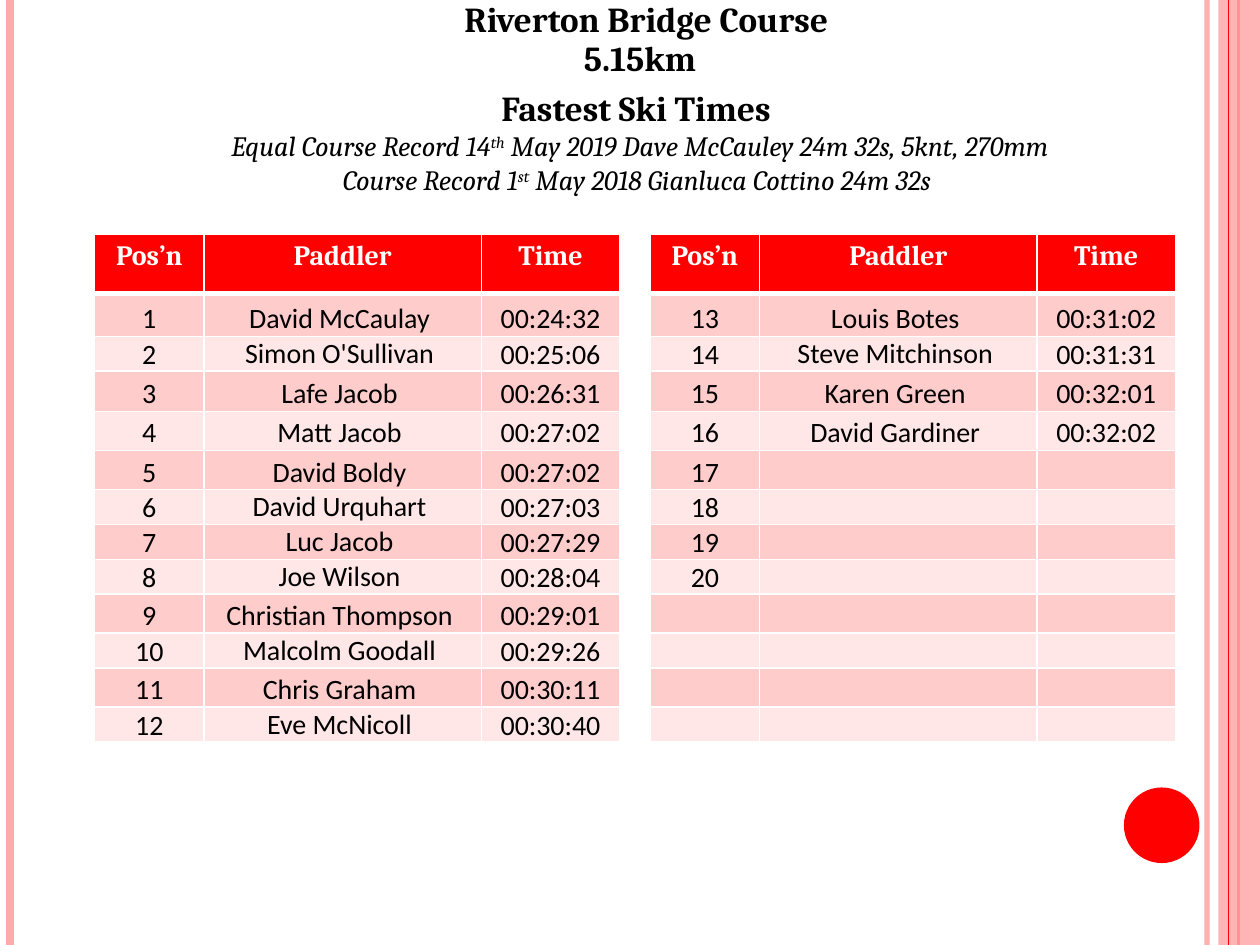
import dataclasses

import lxml.etree
import pptx
import pptx.dml.color
import pptx.enum.shapes
import pptx.enum.text
import pptx.oxml.ns
import pptx.util

Inches = pptx.util.Inches
Pt = pptx.util.Pt
qn = pptx.oxml.ns.qn
CENTER = pptx.enum.text.PP_ALIGN.CENTER
SHAPES = pptx.enum.shapes.MSO_SHAPE


@dataclasses.dataclass(frozen=True)
class Theme:
    """Colours, fonts and type sizes of the slide."""
    red: str = "FF0000"
    pink: str = "FFABAB"
    band_dark: str = "FFCCCC"
    band_light: str = "FFE7E7"
    white: str = "FFFFFF"
    black: str = "000000"
    heading_font: str = "Cambria"
    body_font: str = "Calibri"
    heading_size: int = 20
    body_size: int = 16


def rgb(value):
    """Return a colour object for a hex value."""
    return pptx.dml.color.RGBColor.from_string(value)


class SlideBuilder:
    """Draws styled elements on the current slide."""

    def __init__(self, slide, theme):
        """Keep the slide and its theme."""
        self.slide = slide
        self.theme = theme

    def style(self, font, name, size, color, bold=False, italic=False):
        """Format a font."""
        font.name, font.size = name, Pt(size)
        font.bold, font.italic = bold, italic
        font.color.rgb = rgb(color)

    def fade(self, shape, percent):
        """Make the colours of a shape partly transparent."""
        for color in shape._element.spPr.iter(qn("a:srgbClr")):
            lxml.etree.SubElement(color, qn("a:alpha"), val=str(percent * 1000))

    def rule(self, x, color, width, opacity=100):
        """Draw a full-height vertical line."""
        line = self.slide.shapes.add_connector(
            pptx.enum.shapes.MSO_CONNECTOR.STRAIGHT,
            Inches(x), Inches(0), Inches(x), Inches(7.5))
        line.line.color.rgb = rgb(color)
        line.line.width = Pt(width)
        if opacity < 100:
            self.fade(line, opacity)
        lxml.etree.SubElement(line._element.spPr, qn("a:effectLst"))

    def shape(self, kind, box, color, opacity=100):
        """Draw a filled shape without an outline."""
        shape = self.slide.shapes.add_shape(kind, *map(Inches, box))
        shape.shadow.inherit = False
        shape.fill.solid()
        shape.fill.fore_color.rgb = rgb(color)
        shape.line.fill.background()
        if opacity < 100:
            self.fade(shape, opacity)

    def heading(self, paragraph, text):
        """Write a bold centred heading line."""
        paragraph.text = text
        paragraph.alignment = CENTER
        for run in paragraph.runs:
            self.style(run.font, self.theme.heading_font, self.theme.heading_size,
                       self.theme.black, bold=True)

    def title(self, box, text):
        """Place the slide title."""
        title = self.slide.shapes.title
        title.left, title.top, title.width, title.height = map(Inches, box)
        title.text_frame.auto_size = pptx.enum.text.MSO_AUTO_SIZE.NONE
        title.text_frame.vertical_anchor = pptx.enum.text.MSO_ANCHOR.TOP
        self.heading(title.text_frame.paragraphs[0], text)

    def text(self, box, heading, records=()):
        """Add a heading with italic record lines of before, ordinal and after."""
        frame = self.slide.shapes.add_textbox(*map(Inches, box)).text_frame
        frame.word_wrap = True
        self.heading(frame.paragraphs[0], heading)
        for record in records:
            paragraph = frame.add_paragraph()
            paragraph.alignment = CENTER
            for index, part in enumerate(record):
                run = paragraph.add_run()
                run.text = part
                self.style(run.font, self.theme.heading_font, self.theme.body_size,
                           self.theme.black, italic=True)
                if index == 1:
                    run._r.get_or_add_rPr().set("baseline", "30000")

    def borders(self, cell, top, bottom):
        """Give a cell white borders."""
        widths = {"L": 1, "R": 1, "T": top, "B": bottom}
        for side, width in widths.items():
            line = lxml.etree.SubElement(
                cell._tc.get_or_add_tcPr(), qn(f"a:ln{side}"), w=str(Pt(width)))
            fill = lxml.etree.SubElement(line, qn("a:solidFill"))
            lxml.etree.SubElement(fill, qn("a:srgbClr"), val=self.theme.white)

    def cell(self, cell, text, row, column):
        """Fill and format one table cell."""
        theme = self.theme
        header = row == 0
        self.borders(cell, 3 if row == 1 else 1, 3 if header else 1)
        cell.fill.solid()
        band = theme.band_dark if row % 2 else theme.band_light
        cell.fill.fore_color.rgb = rgb(theme.red if header else band)
        if not header:
            cell.vertical_anchor = pptx.enum.text.MSO_ANCHOR.BOTTOM
            margin = Inches(0 if column == 1 else 0.01)
            cell.margin_left = cell.margin_right = cell.margin_top = margin
            cell.margin_bottom = 0
        paragraph = cell.text_frame.paragraphs[0]
        paragraph.alignment = CENTER
        if not text:
            lxml.etree.SubElement(paragraph._p, qn("a:endParaRPr"),
                                  sz=str(theme.body_size * 100))
            return
        paragraph.text = text
        self.style(paragraph.runs[0].font,
                   theme.heading_font if header else theme.body_font, theme.body_size,
                   theme.white if header else theme.black, bold=header)

    def table(self, left, rows):
        """Add a table of positions, paddlers and times."""
        table = self.slide.shapes.add_table(
            len(rows), 3, Inches(left), Inches(1.86), Inches(4.17), Inches(4.04)).table
        for column, width in zip(table.columns, COLUMN_WIDTHS):
            column.width = Inches(width)
        for row, height in zip(table.rows, ROW_HEIGHTS):
            row.height = Inches(height)
        for row, values in enumerate(rows):
            for column, value in enumerate(values):
                self.cell(table.cell(row, column), value, row, column)


COLUMN_WIDTHS = (0.87, 2.2, 1.1)
ROW_HEIGHTS = (0.47, 0.34, 0.22, 0.32, 0.31, 0.31, 0.26, 0.26, 0.26, 0.31, 0.26, 0.31, 0.26)
HEADER = ("Pos’n", "Paddler", "Time")
ROWS_PER_TABLE = 12
POSITIONS = 20
RECORDS = (
    ("Equal Course Record 14", "th", " May 2019 Dave McCauley 24m 32s, 5knt, 270mm"),
    ("Course Record 1", "st", " May 2018 Gianluca Cottino 24m 32s "),
)
RESULTS = (
    ("David McCaulay ", "00:24:32"),
    ("Simon O'Sullivan ", "00:25:06"),
    ("Lafe Jacob ", "00:26:31"),
    ("Matt Jacob ", "00:27:02"),
    ("David Boldy ", "00:27:02"),
    ("David Urquhart ", "00:27:03"),
    ("Luc Jacob ", "00:27:29"),
    ("Joe Wilson ", "00:28:04"),
    ("Christian Thompson ", "00:29:01"),
    ("Malcolm Goodall ", "00:29:26"),
    ("Chris Graham ", "00:30:11"),
    ("Eve McNicoll ", "00:30:40"),
    ("Louis Botes ", "00:31:02"),
    ("Steve Mitchinson ", "00:31:31"),
    ("Karen Green ", "00:32:01"),
    ("David Gardiner ", "00:32:02"),
)


def result_row(index):
    """Return the table row for a zero-based position."""
    position = str(index + 1) if index < POSITIONS else ""
    return (position, *(RESULTS[index] if index < len(RESULTS) else ("", "")))


def main():
    """Build and save the slide."""
    presentation = pptx.Presentation()
    presentation.slide_width, presentation.slide_height = Inches(10), Inches(7.5)
    theme = Theme()
    builder = SlideBuilder(presentation.slides.add_slide(presentation.slide_layouts[5]), theme)

    builder.rule(9.58, theme.pink, 3, opacity=93)
    builder.rule(0.08, theme.pink, 4.5)
    builder.rule(9.83, theme.red, 1.5)
    builder.shape(SHAPES.RECTANGLE, (9.67, 0, 0.33, 7.5), theme.pink, opacity=87)
    builder.rule(9.75, theme.red, 0.75)
    builder.shape(SHAPES.OVAL, (8.92, 6.25, 0.6, 0.6), theme.red)

    builder.text((0.75, 0.64, 8.66, 0.98), "Fastest Ski Times ", RECORDS)
    builder.title((0.91, -0.07, 8.5, 0.44), "Riverton Bridge Course ")
    builder.text((0.75, 0.24, 8.66, 0.44), "5.15km")
    for number, left in enumerate((0.75, 5.16)):
        start = number * ROWS_PER_TABLE
        builder.table(left, [HEADER, *map(result_row, range(start, start + ROWS_PER_TABLE))])
    presentation.save("out.pptx")


if __name__ == "__main__":
    main()
